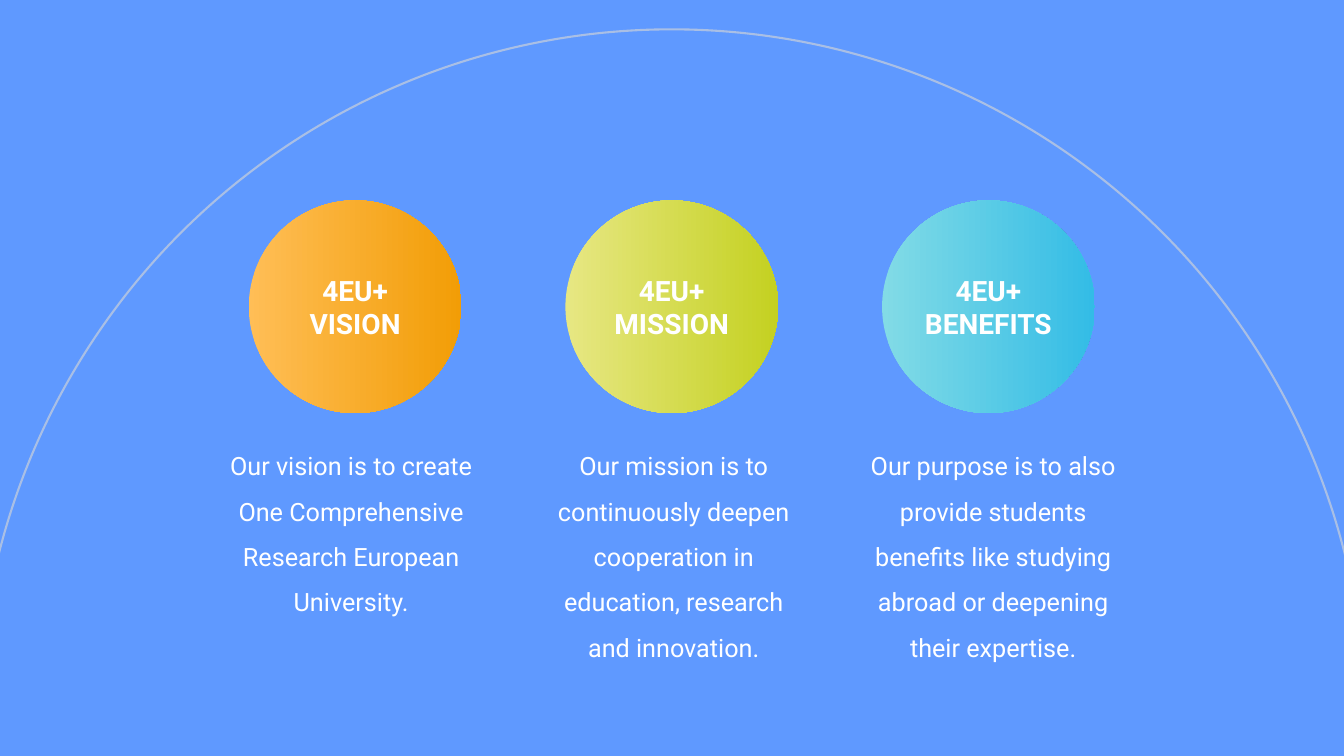
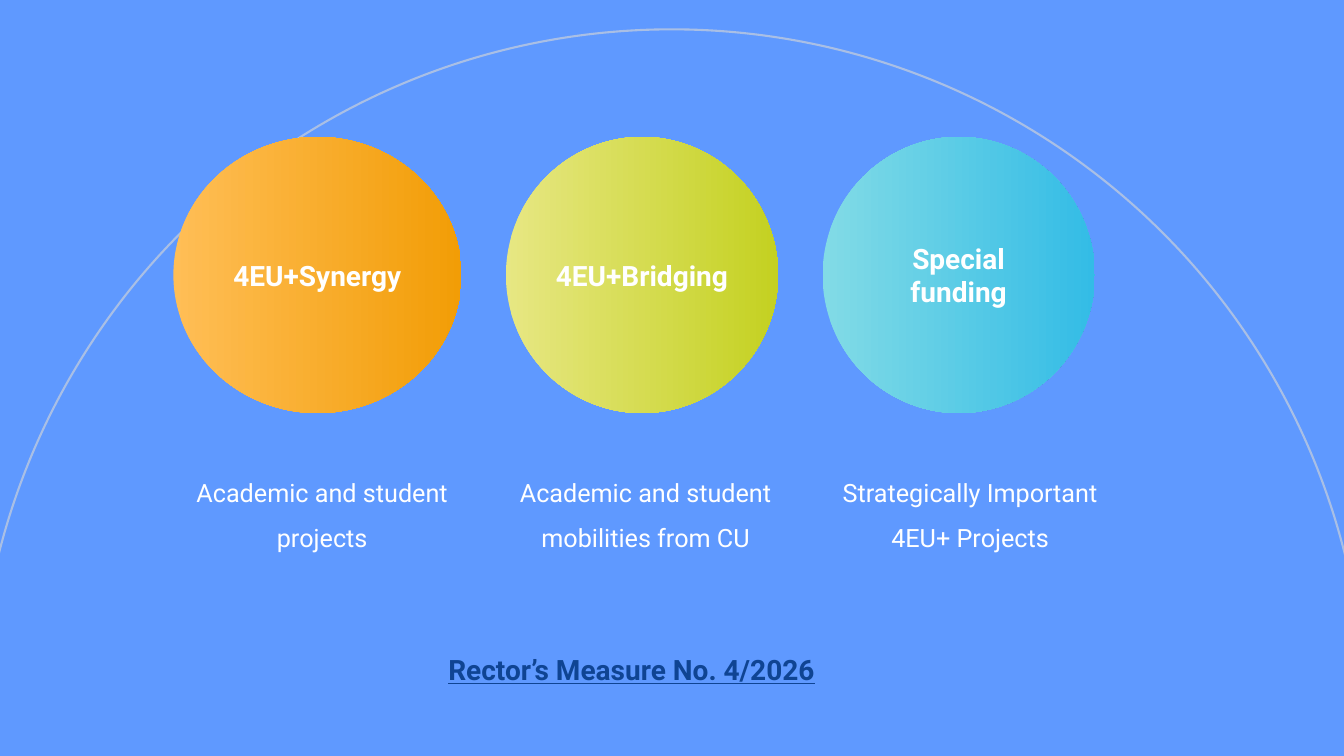
from pptx import Presentation
from pptx import util as u
from pptx.dml.color import RGBColor
from pptx.enum import shapes, text

COLORS = {
    "back": "5F99FF", "arc": "A9BFE5", "white": "FFFFFF", "link": "0F4493",
    "orange": "FFBE56", "orange_end": "F29D06",
    "green": "E7E783", "green_end": "C4D121",
    "cyan": "82DBE6", "cyan_end": "33BCE6",
}
HUES = ("orange", "green", "cyan")
FONT = "Roboto"
BLANK_LAYOUT = 6

# Circles of a column end at the same right edge on both slides
FIRST_RIGHT, PITCH, CIRCLE_BOTTOM = 11.63, 7.98, 10.41
TEXT_WIDTH = 7.04


def rgb(name):
    return RGBColor.from_string(COLORS[name])


class Deck:
    """Holds the style and the current slide."""

    def __init__(self):
        self.prs = Presentation()
        self.prs.slide_width, self.prs.slide_height = u.Cm(33.87), u.Cm(19.05)
        self.layout = self.prs.slide_layouts[BLANK_LAYOUT]
        for ph in list(self.layout.placeholders):
            ph.element.getparent().remove(ph.element)
        fill = self.prs.slide_master.background.fill
        fill.solid()
        fill.fore_color.rgb = rgb("back")
        self.slide = None

    def new_slide(self):
        self.slide = self.prs.slides.add_slide(self.layout)

    def ellipse(self, x, y, w, h):
        sp = self.slide.shapes.add_shape(
            shapes.MSO_SHAPE.OVAL, u.Cm(x), u.Cm(y), u.Cm(w), u.Cm(h))
        sp.shadow.inherit = False
        return sp

    def shared_arc(self):
        """Draw the large ring and move it to the layout all slides use."""
        sp = self.ellipse(-0.56, 0.74, 34.98, 34.98)
        sp.fill.background()
        sp.line.color.rgb = rgb("arc")
        sp.line.width = u.Pt(1.5)
        self.layout.shapes.element.append(sp.element)

    def add_text(self, p, words, size, color="white", bold=False,
                 underline=False):
        r = p.add_run()
        r.text = words
        font = r.font
        font.name, font.size, font.bold = FONT, u.Pt(size), bold
        font.underline = underline
        font.color.rgb = rgb(color)

    def circle(self, column, top, width, hue, lines):
        right = FIRST_RIGHT + PITCH * column
        sp = self.ellipse(right - width, top, width, CIRCLE_BOTTOM - top)
        sp.line.fill.background()
        sp.fill.gradient()
        sp.fill.gradient_angle = 0
        for stop, name in zip(sp.fill.gradient_stops, (hue, hue + "_end")):
            stop.color.rgb = rgb(name)
        tf = sp.text_frame
        tf.word_wrap = True
        tf.margin_left = tf.margin_right = u.Cm(0.1)
        tf.vertical_anchor = text.MSO_ANCHOR.MIDDLE
        for i, line in enumerate(lines):
            p = tf.add_paragraph() if i else tf.paragraphs[0]
            p.alignment = text.PP_ALIGN.CENTER
            self.add_text(p, line, 20, bold=True)

    def text_box(self, x, y, w, h, words, size=18,
                 align=text.PP_ALIGN.CENTER, **style):
        sp = self.slide.shapes.add_textbox(u.Cm(x), u.Cm(y), u.Cm(w), u.Cm(h))
        tf = sp.text_frame
        tf.word_wrap = True
        p = tf.paragraphs[0]
        p.alignment, p.line_spacing = align, 1.5
        self.add_text(p, words, size, **style)

    def columns(self, circle_top, text_top, text_height, items):
        """One circle with a text below it for each item."""
        for i, (hue, (width, lines, x, words)) in enumerate(zip(HUES, items)):
            self.circle(i, circle_top, width, hue, lines)
            self.text_box(x, text_top, TEXT_WIDTH, text_height, words)


def main():
    deck = Deck()

    # Vision, mission, benefits: circle width, label, text left, text
    deck.new_slide()
    deck.shared_arc()
    deck.columns(5.05, 10.85, 5.9, [
        (5.36, ["4EU+", "VISION"], 5.33,
         "Our vision is to create One Comprehensive Research European "
         "University."),
        (5.36, ["4EU+", "MISSION"], 13.46,
         "Our mission is to continuously deepen cooperation in education, "
         "research and innovation."),
        (5.36, ["4EU+", "BENEFITS"], 21.51,
         "Our purpose is to also provide students benefits like studying "
         "abroad or deepening their expertise."),
    ])

    # Funding programmes
    deck.new_slide()
    deck.columns(3.45, 11.51, 2.44, [
        (7.26, ["4EU+Synergy"], 4.6, "Academic and student projects"),
        (6.86, ["4EU+Bridging"], 12.75,
         "Academic and student mobilities from CU"),
        (6.86, ["Special funding"], 20.93,
         "Strategically Important 4EU+ Projects"),
    ])
    deck.text_box(11.05, 15.9, 10.62, 1.4, "Rector’s Measure No. 4/2026", 20,
                  text.PP_ALIGN.LEFT, color="link", bold=True, underline=True)

    deck.prs.save("out.pptx")


if __name__ == "__main__":
    main()
